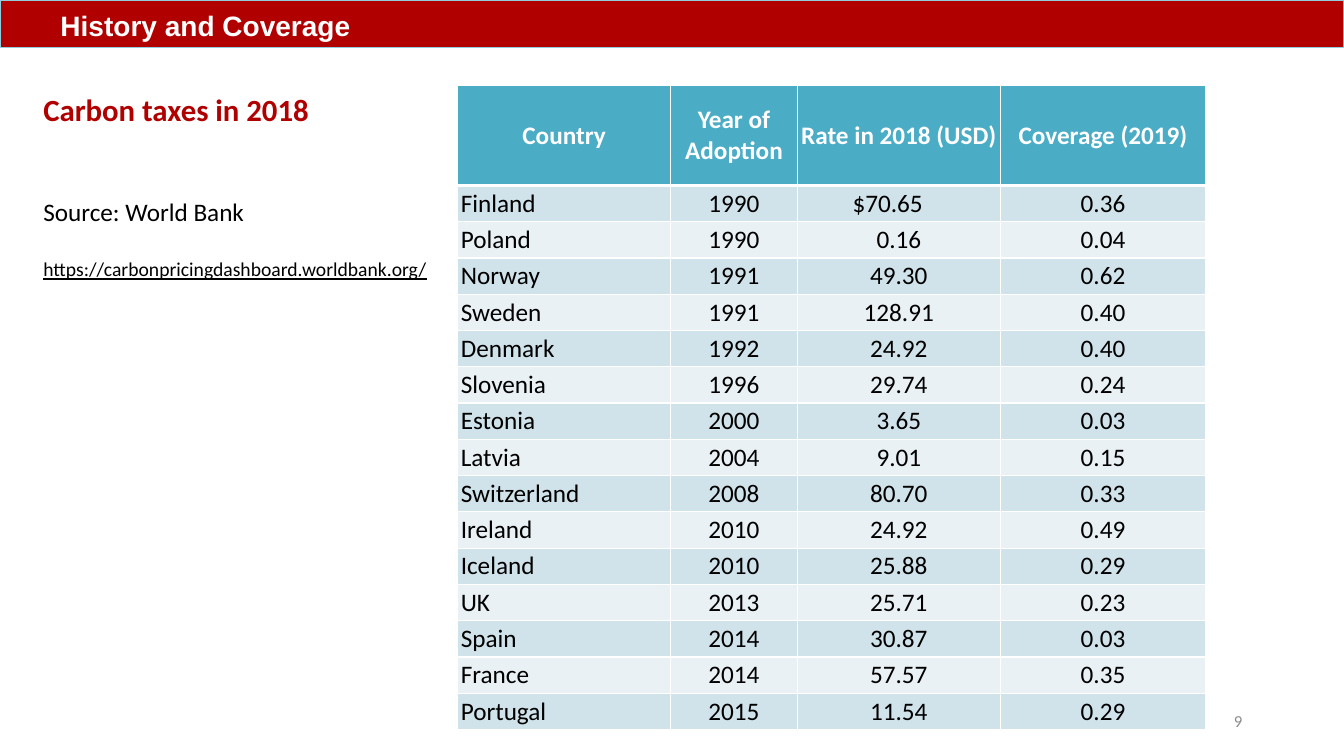
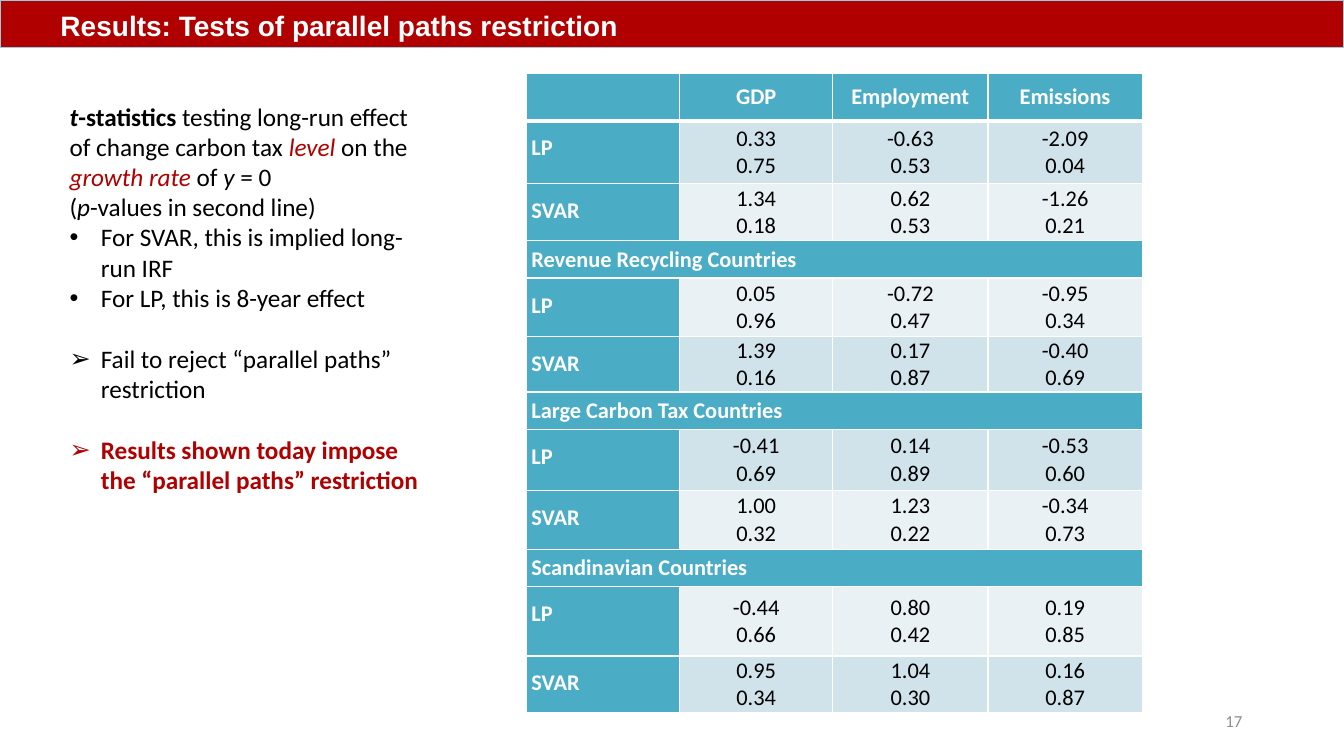
from lxml import etree
from pptx import Presentation
from pptx import util as u
from pptx.dml.color import RGBColor
from pptx.enum import text as t
from pptx.oxml.ns import qn

RED = RGBColor(0xB0, 0x00, 0x00)
BAND_EDGE = RGBColor(0x93, 0xCD, 0xDD)
TEAL = RGBColor(0x4B, 0xAC, 0xC6)
STRIPES = (RGBColor(0xE9, 0xF1, 0xF5), RGBColor(0xD0, 0xE3, 0xEA))
WHITE = RGBColor(0xFF, 0xFF, 0xFF)
BLACK = RGBColor(0x00, 0x00, 0x00)
GREY = RGBColor(0x8C, 0x8C, 0x8C)

BODY = {"name": "Calibri", "size": u.Pt(18), "bold": False, "color": BLACK}
TITLE = {"name": "Arial", "size": u.Pt(20), "bold": True, "color": WHITE}
NUMBER = BODY | {"size": u.Pt(12), "color": GREY}
TABLE_HEAD = {"bold": True, "color": WHITE}
ITALIC = {"italic": True}
RED_ITALIC = {"italic": True, "color": RED}
RED_BOLD = {"bold": True, "color": RED}

LEFT, CENTER, RIGHT = t.PP_ALIGN.LEFT, t.PP_ALIGN.CENTER, t.PP_ALIGN.RIGHT
MIDDLE = t.MSO_ANCHOR.MIDDLE


# Shared helpers
def set_attributes(target, values):
    for name, value in values.items():
        setattr(target, name, value)


def add_run(paragraph, text, style):
    run = paragraph.add_run()
    run.text = text
    for name, value in style.items():
        if name == "color":
            run.font.color.rgb = value
        else:
            setattr(run.font, name, value)


def place(shape, box):
    lengths = [u.Inches(value) for value in box]
    set_attributes(shape, dict(zip(("left", "top", "width", "height"), lengths)))


def set_bullet(paragraph, bullet):
    properties = paragraph._p.get_or_add_pPr()
    indent = u.Inches(0.31) if bullet else 0
    properties.set("marL", str(indent))
    properties.set("indent", str(-indent))
    if bullet:
        etree.SubElement(properties, qn("a:buFont"), typeface="Arial")
        etree.SubElement(properties, qn("a:buChar"), char=bullet)
    else:
        etree.SubElement(properties, qn("a:buNone"))


def set_borders(cell, bottom_width):
    properties = cell._tc.get_or_add_tcPr()
    widths = {"lnL": 1, "lnR": 1, "lnT": 1, "lnB": bottom_width}
    for index, (tag, width) in enumerate(widths.items()):
        line = etree.Element(qn(f"a:{tag}"), w=str(u.Pt(width)))
        fill = etree.SubElement(line, qn("a:solidFill"))
        etree.SubElement(fill, qn("a:srgbClr"), val=str(WHITE))
        properties.insert(index, line)


# Title band and page number
def add_frame(presentation, title_text, page_number):
    slide = presentation.slides.add_slide(presentation.slide_layouts[1])
    title = slide.shapes.title
    place(title, (0, 0, 13.33, 0.47))
    title.fill.solid()
    title.fill.fore_color.rgb = RED
    title.line.color.rgb = BAND_EDGE
    title.line.width = u.Pt(0)
    set_attributes(title.text_frame, {
        "auto_size": t.MSO_AUTO_SIZE.NONE, "word_wrap": True,
        "vertical_anchor": t.MSO_ANCHOR.BOTTOM, "margin_left": u.Inches(0.6)})
    heading = title.text_frame.paragraphs[0]
    heading.alignment = LEFT
    add_run(heading, title_text, TITLE)

    number_box = slide.shapes.add_textbox(0, 0, 0, 0)
    place(number_box, (9.42, 6.95, 3, 0.4))
    set_attributes(number_box.text_frame, {"word_wrap": True, "vertical_anchor": MIDDLE})
    paragraph = number_box.text_frame.paragraphs[0]
    paragraph.alignment = RIGHT
    add_run(paragraph, str(page_number), NUMBER)
    return slide


# Text column: each paragraph is (space before in points, bullet, runs)
def add_text_column(slide, box, paragraphs):
    body = slide.placeholders[1]
    place(body, box)
    frame = body.text_frame
    set_attributes(frame, {"auto_size": t.MSO_AUTO_SIZE.NONE, "word_wrap": True})
    for index, (space, bullet, runs) in enumerate(paragraphs):
        paragraph = frame.add_paragraph() if index else frame.paragraphs[0]
        paragraph.space_before = u.Pt(space)
        set_bullet(paragraph, bullet)
        for text, style in runs:
            add_run(paragraph, text, BODY | style)


# Tables
def add_grid(slide, box, column_widths, row_heights):
    lengths = [u.Inches(value) for value in box]
    table = slide.shapes.add_table(len(row_heights), len(column_widths), *lengths).table
    for column, width in zip(table.columns, column_widths):
        column.width = u.Inches(width)
    for row, height in zip(table.rows, row_heights):
        row.height = u.Inches(height)
    return table


def fill_cell(cell, text, fill, style, align=CENTER, margin=0.05, bottom_width=1,
              anchor=MIDDLE, line_spacing=None):
    cell.fill.solid()
    cell.fill.fore_color.rgb = fill
    set_borders(cell, bottom_width)
    set_attributes(cell, {
        "margin_left": u.Inches(margin), "margin_right": u.Inches(margin),
        "margin_top": 0, "margin_bottom": 0, "vertical_anchor": anchor})
    for index, line in enumerate(text.split("\n")):
        paragraph = cell.text_frame.add_paragraph() if index else cell.text_frame.paragraphs[0]
        set_attributes(paragraph, {"alignment": align, "line_spacing": line_spacing})
        add_run(paragraph, line, BODY | style)


def add_tax_table(slide, box, header, records):
    heights = [0.99] + [0.36] * len(records)
    table = add_grid(slide, box, (2.11, 1.26, 2.01, 2.04), heights)
    for column, text in enumerate(header):
        fill_cell(table.cell(0, column), text, TEAL, TABLE_HEAD, margin=0.03, bottom_width=3)
    for row, record in enumerate(records, 1):
        for column, text in enumerate(record):
            fill_cell(table.cell(row, column), text, STRIPES[row % 2], {},
                      align=CENTER if column else LEFT, margin=0.03)
    # The dollar sign hangs to the left of the figures
    table.cell(1, 2).margin_right = u.Inches(0.25)


def add_test_table(slide, box, header, records):
    heights = (0.47, 0.62, 0.57, 0.37, 0.58, 0.55, 0.37, 0.61, 0.58, 0.37, 0.69, 0.56)
    table = add_grid(slide, box, (1.52, 1.52, 1.54, 1.53), heights)
    small = {"size": u.Pt(16)}
    label = small | TABLE_HEAD
    for column, text in enumerate(header):
        fill_cell(table.cell(0, column), text, TEAL, label, bottom_width=3)
    for row, (name, *values) in enumerate(records, 1):
        first = table.cell(row, 0)
        if not values:
            first.merge(table.cell(row, len(header) - 1))
            fill_cell(first, name, TEAL, label, align=LEFT)
            continue
        fill_cell(first, name, TEAL, label, align=LEFT,
                  anchor=t.MSO_ANCHOR.TOP, line_spacing=1.5)
        for column, text in enumerate(values, 1):
            fill_cell(table.cell(row, column), text, STRIPES[row % 2], small)


# Slide content
TAX_HEADER = ("Country", "Year of Adoption", "Rate in 2018 (USD)", "Coverage (2019)")
TAX_RECORDS = (
    ("Finland", "1990", "$70.65", "0.36"),
    ("Poland", "1990", "0.16", "0.04"),
    ("Norway", "1991", "49.30", "0.62"),
    ("Sweden", "1991", "128.91", "0.40"),
    ("Denmark", "1992", "24.92", "0.40"),
    ("Slovenia", "1996", "29.74", "0.24"),
    ("Estonia", "2000", "3.65", "0.03"),
    ("Latvia", "2004", "9.01", "0.15"),
    ("Switzerland", "2008", "80.70", "0.33"),
    ("Ireland", "2010", "24.92", "0.49"),
    ("Iceland", "2010", "25.88", "0.29"),
    ("UK", "2013", "25.71", "0.23"),
    ("Spain", "2014", "30.87", "0.03"),
    ("France", "2014", "57.57", "0.35"),
    ("Portugal", "2015", "11.54", "0.29"),
)
TAX_NOTES = (
    (0, None, [("Carbon taxes in 2018", RED_BOLD | {"size": u.Pt(22)})]),
    (49, None, [("Source: World Bank", {})]),
    (22, None, [("https://carbonpricingdashboard.worldbank.org/",
                 {"size": u.Pt(14), "underline": True})]),
)

TEST_HEADER = ("", "GDP", "Employment", "Emissions")
TEST_RECORDS = (
    ("LP", "0.33\n0.75", "-0.63\n0.53", "-2.09\n0.04"),
    ("SVAR", "1.34\n0.18", "0.62\n0.53", "-1.26\n0.21"),
    ("Revenue Recycling Countries",),
    ("LP", "0.05\n0.96", "-0.72\n0.47", "-0.95\n0.34"),
    ("SVAR", "1.39\n0.16", "0.17\n0.87", "-0.40\n0.69"),
    ("Large Carbon Tax Countries",),
    ("LP", "-0.41\n0.69", "0.14\n0.89", "-0.53\n0.60"),
    ("SVAR", "1.00\n0.32", "1.23\n0.22", "-0.34\n0.73"),
    ("Scandinavian Countries",),
    ("LP", "-0.44\n0.66", "0.80\n0.42", "0.19\n0.85"),
    ("SVAR", "0.95\n0.34", "1.04\n0.30", "0.16\n0.87"),
)
TEST_NOTES = (
    (0, None, [("t", {"bold": True, "italic": True}), ("-statistics", {"bold": True}),
               (" testing long-run effect of change carbon tax ", {}),
               ("level", RED_ITALIC), (" on the ", {}), ("growth rate", RED_ITALIC),
               (" of ", {}), ("y", ITALIC), (" = 0", {})]),
    (0, None, [("(", {}), ("p", ITALIC), ("-values in second line)", {})]),
    (0, "•", [("For SVAR, this is implied long-run IRF", {})]),
    (0, "•", [("For LP, this is 8-year effect", {})]),
    (22, "➢", [("Fail to reject “parallel paths” restriction", {})]),
    (22, "➢", [("Results shown today impose the “parallel paths” restriction", RED_BOLD)]),
)


def main():
    presentation = Presentation()
    presentation.slide_width = u.Inches(13.33)
    presentation.slide_height = u.Inches(7.5)

    coverage = add_frame(presentation, "History and Coverage", 9)
    add_text_column(coverage, (0.33, 0.85, 4.1, 1.99), TAX_NOTES)
    add_tax_table(coverage, (4.54, 0.85, 7.43, 6.4), TAX_HEADER, TAX_RECORDS)

    results = add_frame(presentation, "Results: Tests of parallel paths restriction", 17)
    add_text_column(results, (0.59, 0.95, 3.78, 4.04), TEST_NOTES)
    add_test_table(results, (5.22, 0.73, 6.11, 6.35), TEST_HEADER, TEST_RECORDS)

    presentation.save("out.pptx")


if __name__ == "__main__":
    main()
